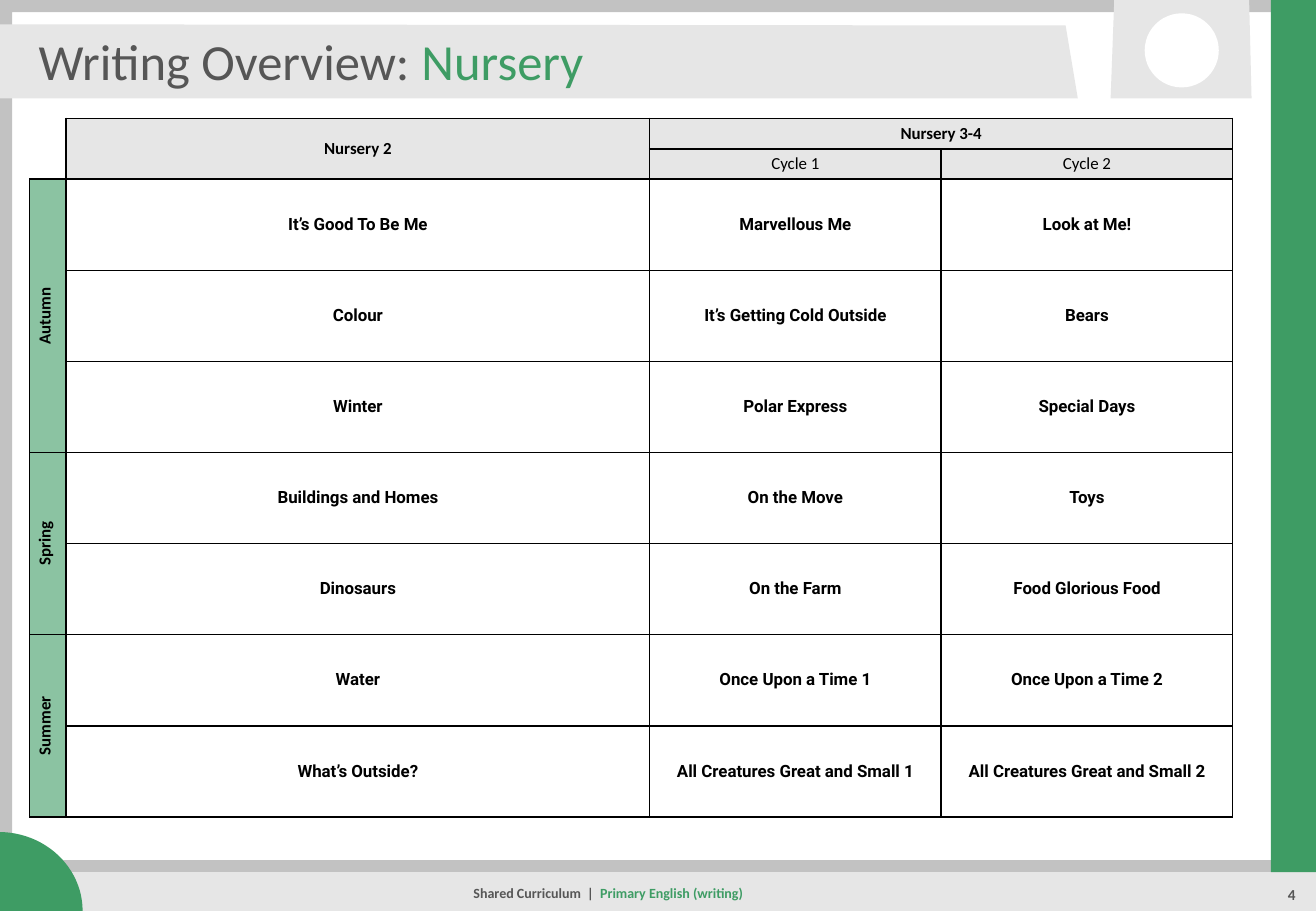
from lxml import etree
from pptx import Presentation, util as u
from pptx.dml.color import RGBColor
from pptx.enum import shapes as sh, text as tx
from pptx.oxml import ns

# Grid: one unit is a hundredth of an inch
G = u.Inches(0.01)
W, H = 1083, 750
HEX = {"grey": "C2C2C2", "pale": "E6E6E6", "green": "3E9C64",
       "dark": "565656", "white": "FFFFFF", "black": "000000"}
RGB = {name: RGBColor.from_string(code) for name, code in HEX.items()}

deck = Presentation()
deck.slide_width, deck.slide_height = W * G, H * G
page = deck.slides.add_slide(deck.slide_layouts[6])
draw = page.shapes


def paint(shape, tint):
    shape.shadow.inherit = False
    shape.fill.solid()
    shape.fill.fore_color.rgb = RGB[tint]
    shape.line.fill.background()


def write(frame, runs, size, bold, face="Calibri", **form):
    para = frame.paragraphs[0]
    for key, val in form.items():
        setattr(para, key, val)
    for words, tint in runs:
        run = para.add_run()
        run.text = words
        for key, val in {"size": u.Pt(size), "bold": bold, "name": face}.items():
            setattr(run.font, key, val)
        run.font.color.rgb = RGB[tint]


# Frame, title band and badge outlines
frame = [[(0, 0), (W, 0), (W, H), (0, H)],
         [(10, 10), (10, 741), (1073, 741), (1073, 10)]]
band = [[(0, 20), (877, 21), (887, 81), (0, 81)]]
badge = [[(914, 81), (1030, 81), (1028, 0), (917, 0)]]
for loops, tint in ((frame, "grey"), (band, "pale"), (badge, "pale")):
    pen = draw.build_freeform(*loops[0][0], scale=G)
    pen.add_line_segments(loops[0][1:])
    for loop in loops[1:]:
        pen.move_to(*loop[0])
        pen.add_line_segments(loop[1:])
    paint(pen.convert_to_shape(), tint)

# Footer rule
rule = draw.add_connector(sh.MSO_CONNECTOR.STRAIGHT, 5 * G, 713 * G, W * G, 713 * G)
rule.line.width = u.Pt(7)
rule.line.color.rgb = RGB["grey"]
etree.SubElement(rule._element.spPr, ns.qn("a:effectLst"))

# Footer strip, corner, badge hole and side bar
KIND = sh.MSO_SHAPE
for kind, tint, spot in (
        (KIND.RECTANGLE, "pale", (32, 718, W - 32, H - 718)),
        (KIND.ARC, "green", (-70, 685, 138, 130)),
        (KIND.OVAL, "white", (942, 11, 61, 61)),
        (KIND.RECTANGLE, "green", (1046, 0, W - 1046, 718))):
    paint(draw.add_shape(kind, *(n * G for n in spot)), tint)

# Title, footer and page number
MID, TOP = tx.MSO_ANCHOR.MIDDLE, tx.MSO_ANCHOR.TOP
MIDDLE = {"alignment": tx.PP_ALIGN.CENTER}
for spot, anchor, size, bold, runs, form in (
        ((22, 25, 842, 50), MID, 30, False,
         [("Writing Overview: ", "dark"), ("Nursery", "green")], {}),
        ((205, 721, 591, 30), MID, 8.3, True,
         [("Shared Curriculum  |  ", "dark"), ("Primary English (writing)", "green")],
         {**MIDDLE, "line_spacing": 0.9}),
        ((1031, 721, 64, 28), TOP, 9, True, [("4", "dark")],
         {**MIDDLE, "line_spacing": 1.2, "space_after": u.Pt(12)})):
    box = draw.add_textbox(*(n * G for n in spot)).text_frame
    box.word_wrap, box.vertical_anchor = True, anchor
    write(box, runs, size, bold, **form)

# Table content: two header rows, then the terms
rows = [
    ["", "Nursery 2", "Nursery 3-4", ""],
    ["", "", "Cycle 1", "Cycle 2"],
    ["Autumn", "It’s Good To Be Me", "Marvellous Me", "Look at Me!"],
    ["", "Colour", "It’s Getting Cold Outside", "Bears"],
    ["", "Winter", "Polar Express", "Special Days"],
    ["Spring", "Buildings and Homes", "On the Move", "Toys"],
    ["", "Dinosaurs", "On the Farm", "Food Glorious Food"],
    ["Summer", "Water", "Once Upon a Time 1", "Once Upon a Time 2"],
    ["", "What’s Outside?", "All Creatures Great and Small 1",
     "All Creatures Great and Small 2"],
]
wide = [30, 480, 240, 240]
tall = [25] * 2 + [75] * 7
grid = draw.add_table(len(rows), len(wide), int(24.5 * G), int(97.5 * G),
                      sum(wide) * G, sum(tall) * G).table
grid.first_row = grid.horz_banding = False
for col, n in zip(grid.columns, wide):
    col.width = n * G
for row, n in zip(grid.rows, tall):
    row.height = n * G
for r1, c1, r2, c2 in ((0, 0, 1, 0), (0, 1, 1, 1), (0, 2, 0, 3),
                       (2, 0, 4, 0), (5, 0, 6, 0), (7, 0, 8, 0)):
    grid.cell(r1, c1).merge(grid.cell(r2, c2))

# Cell fill, text and borders
for r, row in enumerate(rows):
    for c, words in enumerate(row):
        cell = grid.cell(r, c)
        head, term = r < 2, c == 0
        corner = head and term
        side, edge = (4, 4) if term and not head else (6, 0)
        for key, val in {"margin_left": side, "margin_right": side, "margin_top": edge,
                         "margin_bottom": edge}.items():
            setattr(cell, key, val * G)
        cell.vertical_anchor = MID
        prop = cell._tc.get_or_add_tcPr()
        if corner or not (head or term):
            cell.fill.background()
        else:
            cell.fill.solid()
            cell.fill.fore_color.rgb = RGB["pale" if head else "green"]
        if term and not head:
            prop.set("vert", "vert270")
            tone = prop.find(".//" + ns.qn("a:srgbClr"))
            etree.SubElement(tone, ns.qn("a:alpha"), val="60000")
        if words:
            gap = 2 if head else 6 if c > 1 else 0
            write(cell.text_frame, [(words, "black")], 10, r != 1,
                  "Calibri" if head or term else "Roboto",
                  space_after=u.Pt(gap), **MIDDLE)
        else:
            # Small type keeps blank cells from stretching their row
            para = cell.text_frame.paragraphs[0]._p
            etree.SubElement(para, ns.qn("a:endParaRPr"), sz="800")
        for at, way in enumerate("RB" if corner else "LRTB"):
            line = etree.Element(ns.qn("a:ln" + way), w=str(u.Pt(1)))
            ink = etree.SubElement(line, ns.qn("a:solidFill"))
            etree.SubElement(ink, ns.qn("a:srgbClr"), val=HEX["black"])
            prop.insert(at, line)

deck.save("out.pptx")
